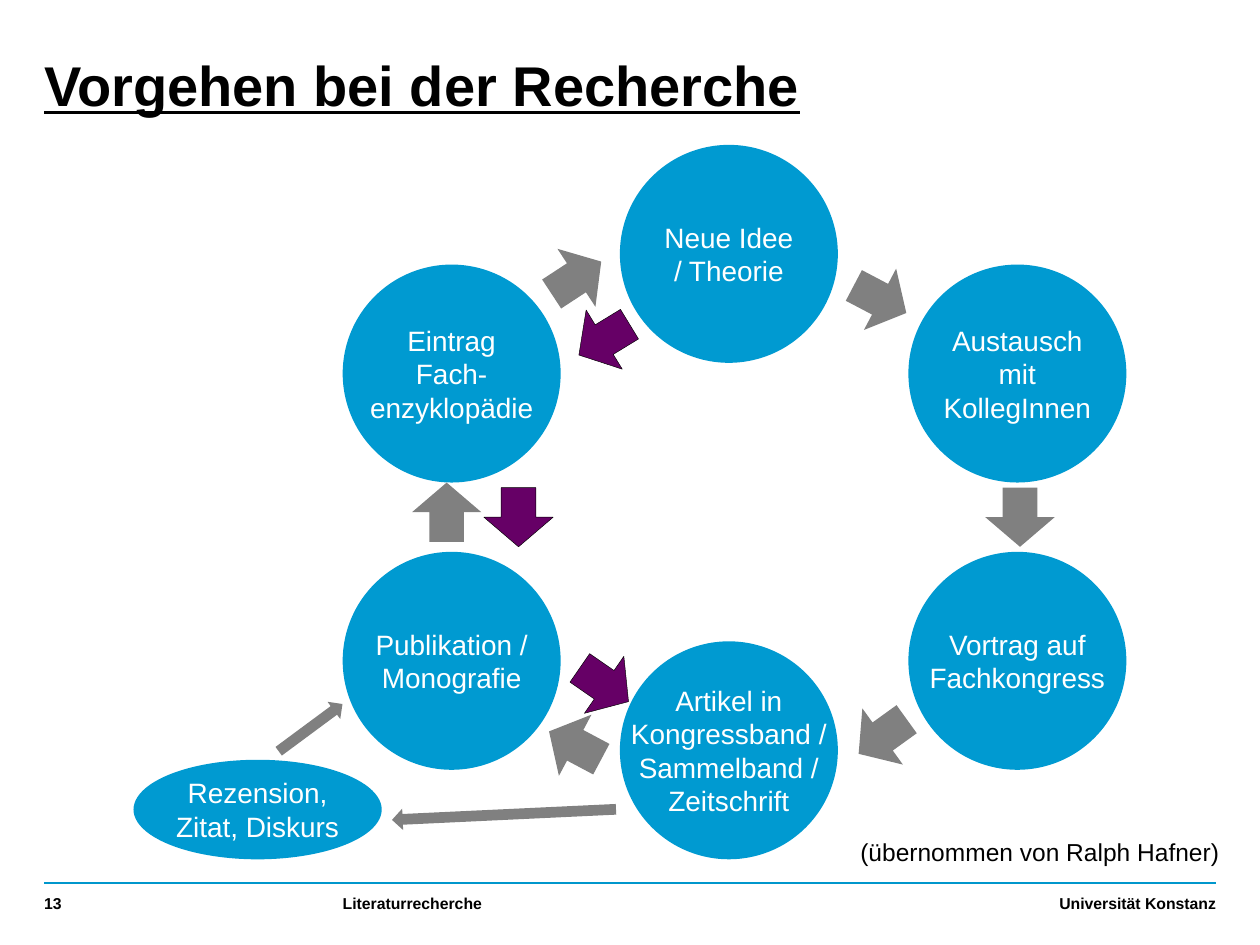
from pptx import Presentation
from pptx.dml.color import RGBColor
from pptx.enum.shapes import MSO_CONNECTOR, MSO_SHAPE
from pptx.enum.text import MSO_ANCHOR, PP_ALIGN
from pptx.oxml.ns import qn
from pptx.util import Inches, Pt

OVAL, ARROW = MSO_SHAPE.OVAL, MSO_SHAPE.RIGHT_ARROW
LEFT, MID, RIGHT = PP_ALIGN.LEFT, PP_ALIGN.CENTER, PP_ALIGN.RIGHT
TOP, CENTER, BOTTOM = MSO_ANCHOR.TOP, MSO_ANCHOR.MIDDLE, MSO_ANCHOR.BOTTOM
BLUE, GRAY, PLUM = "009AD1", "808080", "660066"
BLACK, WHITE = "000000", "FFFFFF"
rgb = RGBColor.from_string

deck = Presentation()
deck.slide_width, deck.slide_height = Inches(10), Inches(7.5)
slide = deck.slides.add_slide(deck.slide_layouts[6])
shapes = slide.shapes


def write(shape, text, size=16, color=BLACK, bold=False, line=False, align=LEFT,
          anchor=TOP, pad=(0, 0, 0, 0), wrap=True, gap=1.0):
    """Fill a shape with one paragraph per line; pad is left, top, right, bottom."""
    frame = shape.text_frame
    frame.word_wrap, frame.vertical_anchor = wrap, anchor
    (frame.margin_left, frame.margin_top,
     frame.margin_right, frame.margin_bottom) = map(Inches, pad)
    frame.text = text
    for para in frame.paragraphs:
        para.alignment, para.line_spacing = align, gap
        font = para.runs[0].font
        font.name, font.size, font.bold, font.underline = "Arial", Pt(size), bold, line
        font.color.rgb = rgb(color)


def draw(kind, x, y, wide, high, fill, turn=0, edge=None):
    shape = shapes.add_shape(kind, *map(Inches, (x, y, wide, high)))
    shape.shadow.inherit = False
    shape.rotation = turn
    shape.fill.solid()
    shape.fill.fore_color.rgb = rgb(fill)
    if edge:
        shape.line.color.rgb = rgb(edge)
        shape.line.width = Pt(0.25)
    else:
        shape.line.fill.background()
    return shape


# Title, footer and credit
rule = shapes.add_connector(MSO_CONNECTOR.STRAIGHT, *map(Inches, (0.35, 7.01, 9.65, 7.01)))
rule.line.color.rgb = rgb("0097CC")
rule.line.width = Pt(1)
rule._element.spPr.append(rule._element.makeelement(qn("a:effectLst"), {}))

foot = dict(size=9, bold=True, anchor=BOTTOM, pad=(0, 0, 0, 0.06))
labels = [
    (0.35, 0.44, 6.93, 1.34, "Vorgehen bei der Recherche",
     dict(size=32, bold=True, line=True, gap=0.95)),
    (6.26, 7.06, 3.39, 0.24, "Universität Konstanz", dict(foot, align=RIGHT)),
    (2.72, 7.06, 3.39, 0.24, "Literaturrecherche", foot),
    (0.35, 7.06, 1.02, 0.24, "13", foot),
    (6.73, 6.59, 3.06, 0.34, "(übernommen von Ralph Hafner)",
     dict(size=14, pad=(0.1, 0.05, 0.1, 0.05), wrap=False)),
]
for x, y, wide, high, text, style in labels:
    write(shapes.add_textbox(*map(Inches, (x, y, wide, high))), text, **style)

# Circle of stations: three columns, four rows
cols, rows = (2.72, 4.92, 7.21), (1.15, 2.1, 4.38, 5.09)
SIZE = 1.73
stations = [
    (1, 0, "Neue Idee / Theorie"),
    (2, 1, "Austausch\nmit\nKollegInnen"),
    (2, 2, "Vortrag auf\nFachkongress"),
    (1, 3, "Artikel in\nKongressband /\nSammelband /\nZeitschrift"),
    (0, 2, "Publikation /\nMonografie"),
    (0, 1, "Eintrag\nFach-\nenzyklopädie"),
]
ovals = [(cols[col], rows[row], SIZE, SIZE, text) for col, row, text in stations]
ovals.append((1.06, 6.03, 1.97, 0.79, "Rezension,\nZitat, Diskurs"))
for x, y, wide, high, text in ovals:
    oval = draw(OVAL, x, y, wide, high, BLUE)
    write(oval, text, color=WHITE, align=MID, anchor=CENTER,
          pad=(0.1, 0.05, 0.1, 0.05), wrap="\n" not in text)

# Gray arrows lead round the circle, plum ones lead back
block = (0.47, 0.55)
onward = [(6.75, 2.1, 27.7), (7.86, 3.83, 90), (6.77, 5.57, 144.2),
          (4.33, 5.64, 208), (3.31, 3.79, 270), (4.34, 1.93, 326.8)]
back = [(4.56, 2.42, 148.6), (3.88, 3.83, 90), (4.56, 5.16, 34.7)]
for x, y, turn in onward:
    draw(ARROW, x, y, *block, GRAY, turn)
for x, y, wide, turn in [(3.11, 6.38, 1.78, 177.3), (2.15, 5.69, 0.63, 323.5)]:
    draw(ARROW, x, y, wide, 0.17, GRAY, turn)
for x, y, turn in back:
    draw(ARROW, x, y, *block, PLUM, turn, edge=BLACK)

deck.save("out.pptx")
